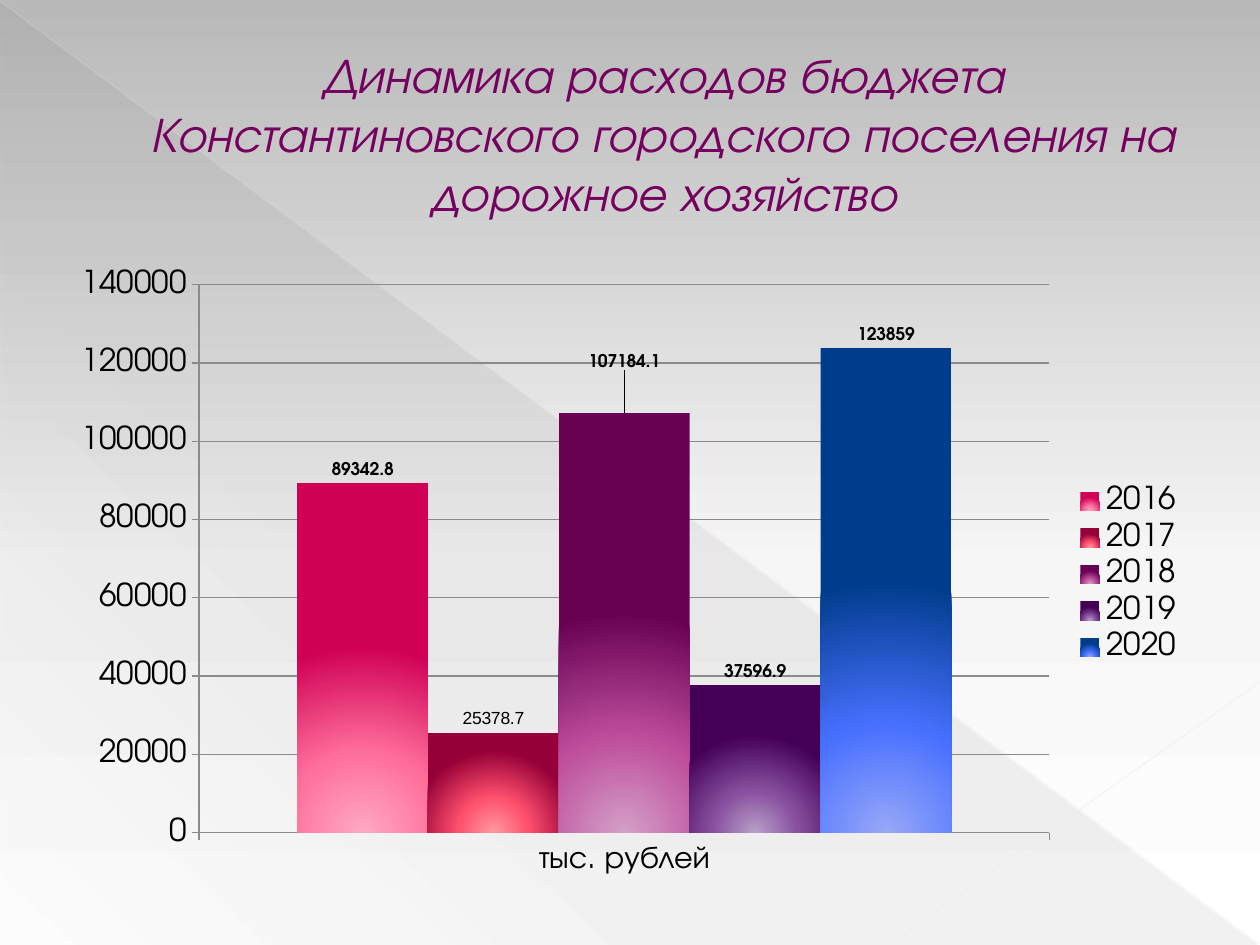
from pptx import Presentation
from pptx.chart.data import CategoryChartData
from pptx.dml.color import RGBColor
from pptx.enum.chart import XL_CHART_TYPE, XL_LABEL_POSITION, XL_LEGEND_POSITION, XL_TICK_MARK
from pptx.enum.shapes import MSO_CONNECTOR, MSO_SHAPE
from pptx.enum.text import MSO_ANCHOR, PP_ALIGN
from pptx.oxml import parse_xml
from pptx.oxml.ns import nsdecls, qn
from pptx.util import Cm, Pt

FONT = "TeX Gyre Adventor"
LABEL_FONT = "Arial"
BLACK = RGBColor(0x00, 0x00, 0x00)
PLUM = RGBColor(0x75, 0x00, 0x5F)
GRID_GRAY = RGBColor(0x8B, 0x8B, 0x8B)
SHADE_GRAY = RGBColor(0x66, 0x66, 0x66)
LINE_GRAY = RGBColor(0xE8, 0xE8, 0xE8)
PALE_GRAY = RGBColor(0xEA, 0xEA, 0xEA)
COLUMN = XL_CHART_TYPE.COLUMN_CLUSTERED
OUTSIDE_END = XL_LABEL_POSITION.OUTSIDE_END
LEGEND_RIGHT = XL_LEGEND_POSITION.RIGHT
TICK_OUTSIDE = XL_TICK_MARK.OUTSIDE
STRAIGHT = MSO_CONNECTOR.STRAIGHT
RIGHT_TRIANGLE = MSO_SHAPE.RIGHT_TRIANGLE
MIDDLE = MSO_ANCHOR.MIDDLE
CENTER = PP_ALIGN.CENTER

# Stops are (position %, colour, opacity %).
BACKGROUND_STOPS = [
    (0, RGBColor(0xB9, 0xB9, 0xB9), 100),
    (60, RGBColor(0xF6, 0xF6, 0xF6), 100),
    (100, RGBColor(0xFF, 0xFF, 0xFF), 100),
]
TRIANGLE_STOPS = [(0, SHADE_GRAY, 10), (70, SHADE_GRAY, 8), (100, SHADE_GRAY, 1)]

# Year, spending, and the colours from the glow at the foot outwards.
SPENDING = [
    ("2016", 89342.8, ("FFA8C4", "FF6F9C", "D00055")),
    ("2017", 25378.7, ("FF9AA0", "FF506E", "960038")),
    ("2018", 107184.1, ("D4A0C8", "BE4F9C", "680054")),
    ("2019", 37596.9, ("B8A0C8", "8850A0", "440055")),
    ("2020", 123859, ("98A8F8", "4870FF", "003C8C")),
]
GLOW_POSITIONS = (0, 43, 100)
LINEAR = '<a:lin ang="{}" scaled="0"/>'
GLOW = '<a:path path="circle"><a:fillToRect l="50000" t="100000" r="50000" b="0"/></a:path>'


def set_gradient(fill, properties, stops, direction):
    fill.solid()
    stop_xml = "".join(
        f'<a:gs pos="{position * 1000}"><a:srgbClr val="{color}">'
        f'<a:alpha val="{opacity * 1000}"/></a:srgbClr></a:gs>'
        for position, color, opacity in stops
    )
    gradient = parse_xml(
        f'<a:gradFill {nsdecls("a")} rotWithShape="1">'
        f"<a:gsLst>{stop_xml}</a:gsLst>{direction}</a:gradFill>"
    )
    properties.replace(properties.find(qn("a:solidFill")), gradient)


def set_font(font, size, color=BLACK, name=FONT, bold=False):
    font.name = name
    font.size = Pt(size)
    font.bold = bold
    font.color.rgb = color


def set_layout(parent, position, target="", **fractions):
    """Place a chart part by hand, in fractions of the chart."""
    for old in parent.findall(qn("c:layout")):
        parent.remove(old)
    values = "".join(f'<c:{key} val="{value}"/>' for key, value in fractions.items())
    parent.insert(position, parse_xml(
        f'<c:layout {nsdecls("c")}><c:manualLayout>{target}{values}</c:manualLayout></c:layout>'
    ))


def add_triangle(slide):
    triangle = slide.shapes.add_shape(RIGHT_TRIANGLE, Cm(0.02), Cm(0.04), Cm(25.35), Cm(19))
    triangle.shadow.inherit = False
    set_gradient(triangle.fill, triangle._element.spPr, TRIANGLE_STOPS, LINEAR.format(133 * 60000))
    triangle.line.fill.background()


def add_line(slide, start, end, color, width, opacity):
    line = slide.shapes.add_connector(STRAIGHT, *map(Cm, start + end))
    line.line.color.rgb = color
    line.line.width = Pt(width)
    properties = line._element.spPr
    properties.find(".//" + qn("a:srgbClr")).append(
        parse_xml(f'<a:alpha {nsdecls("a")} val="{opacity * 1000}"/>')
    )
    properties.append(parse_xml(f'<a:effectLst {nsdecls("a")}/>'))


def add_title(slide, text):
    frame = slide.shapes.add_textbox(Cm(1.27), Cm(0.74), Cm(22.86), Cm(3.89)).text_frame
    frame.word_wrap = True
    frame.vertical_anchor = MIDDLE
    paragraph = frame.paragraphs[0]
    paragraph.text = text
    paragraph.alignment = CENTER
    paragraph._p.get_or_add_pPr().set("marL", str(Cm(1.35)))
    set_font(paragraph.font, 28, PLUM)
    paragraph.font.italic = True


def style_axes(chart):
    value_axis = chart.value_axis
    value_axis.minimum_scale, value_axis.maximum_scale = 0, 140000
    value_axis.major_unit = 20000
    value_axis.has_major_gridlines = True
    gridlines = value_axis.major_gridlines.format.line
    for line in (gridlines, value_axis.format.line, chart.category_axis.format.line):
        line.color.rgb = GRID_GRAY
        line.width = Pt(0.75)
    for axis in (value_axis, chart.category_axis):
        axis.major_tick_mark = TICK_OUTSIDE
        set_font(axis.tick_labels.font, 18)


def style_series(series, glow_colors):
    stops = [(position, color, 100) for position, color in zip(GLOW_POSITIONS, glow_colors)]
    set_gradient(series.format.fill, series._element.find(qn("c:spPr")), stops, GLOW)
    labels = series.data_labels
    labels.show_value = True
    labels.position = OUTSIDE_END
    if series.name == "2017":
        set_font(labels.font, 10, name=LABEL_FONT)
    else:
        set_font(labels.font, 10, bold=True)
    if series.name == "2018":
        label = series.points[0].data_label
        set_font(label.font, 10, bold=True)
        label.position = OUTSIDE_END
        set_layout(series._element.find(".//" + qn("c:dLbl")), 1, x=0, y=-0.06)


def add_spending_chart(slide):
    data = CategoryChartData()
    data.categories = ["тыс. рублей"]
    for year, amount, _ in SPENDING:
        data.add_series(year, [amount])
    chart = slide.shapes.add_chart(
        COLUMN, Cm(1.27), Cm(5.23), Cm(22.86), Cm(12.7), data
    ).chart
    set_font(chart.font, 18)
    chart.has_title = False
    chart.has_legend = True
    chart.legend.position = LEGEND_RIGHT
    chart.legend.include_in_layout = False
    set_font(chart.legend.font, 18)
    style_axes(chart)
    plot = chart.plots[0]
    plot.gap_width = 150
    plot.overlap = 0
    plot.vary_by_categories = False
    for series, (_, _, glow_colors) in zip(plot.series, SPENDING):
        style_series(series, glow_colors)
    set_layout(
        chart._chartSpace.find(".//" + qn("c:plotArea")), 0,
        '<c:layoutTarget val="inner"/><c:xMode val="edge"/><c:yMode val="edge"/>',
        x=0.12, y=0.04, w=0.75, h=0.87,
    )


def main():
    presentation = Presentation()
    presentation.slide_width = Cm(25.4)
    presentation.slide_height = Cm(19.05)
    slide = presentation.slides.add_slide(presentation.slide_layouts[6])
    background = slide.background.fill
    background.solid()
    set_gradient(background, slide._element.find(".//" + qn("p:bgPr")),
                 BACKGROUND_STOPS, LINEAR.format(90 * 60000))
    add_triangle(slide)
    add_line(slide, (0, 0.02), (25.37, 19.02), LINE_GRAY, 0.39, 35)
    add_line(slide, (25.4, 13.74), (17.96, 19.02), PALE_GRAY, 0.47, 45)
    add_title(slide, "Динамика расходов бюджета Константиновского городского "
                     "поселения на дорожное хозяйство")
    add_spending_chart(slide)
    presentation.save("out.pptx")


if __name__ == "__main__":
    main()
